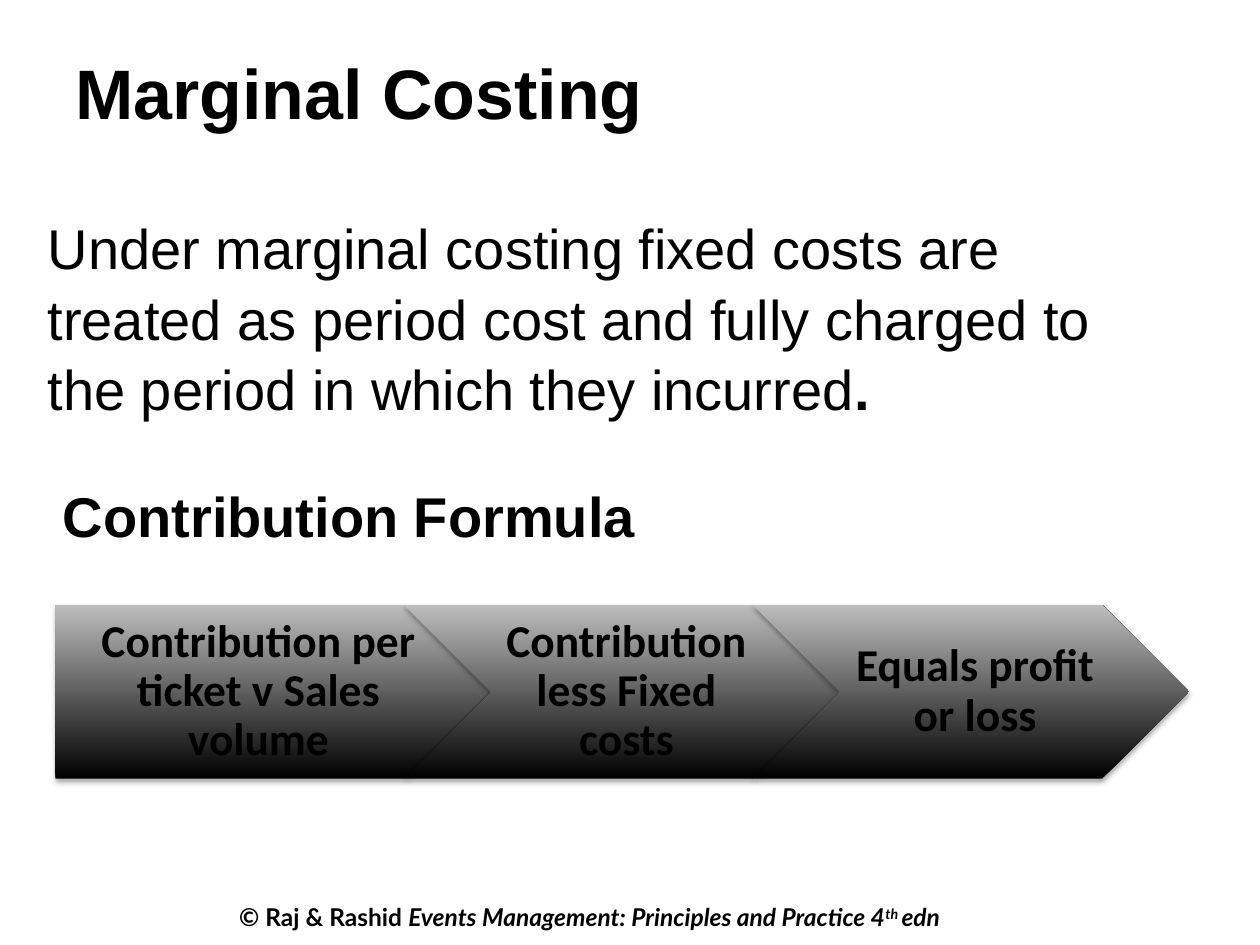
from lxml.etree import SubElement
from pptx import Presentation
from pptx.dml.color import RGBColor
from pptx.enum.shapes import MSO_SHAPE as SHAPE
from pptx.enum.text import MSO_ANCHOR as ANCHOR, PP_ALIGN as ALIGN
from pptx.oxml.ns import qn
from pptx.util import Inches, Pt

BLACK = RGBColor(0x00, 0x00, 0x00)
GREY = RGBColor(0xBD, 0xBD, 0xBD)


def add_runs(p, runs, **base):
    """Append (text, overrides) runs that share a base font format."""
    for text, extra in runs:
        r = p.add_run()
        r.text = text
        r.font.color.rgb = BLACK
        for name, value in {**base, **extra}.items():
            setattr(r.font, name, value)
    return p


def add_text(box, runs, spacing, **base):
    tb = s.shapes.add_textbox(*map(Inches, box))
    tb.text_frame.word_wrap = True
    p = add_runs(tb.text_frame.paragraphs[0], runs, **base)
    p.line_spacing = spacing
    return p


prs = Presentation()
prs.slide_width, prs.slide_height = Inches(10), Inches(7.5)
s = prs.slides.add_slide(prs.slide_layouts[5])

# Title
title = s.shapes.title
title.left, title.top, title.width, title.height = map(Inches, (0.5, 0.3, 9, 0.93))
title.text_frame.vertical_anchor = ANCHOR.MIDDLE
p = add_runs(title.text_frame.paragraphs[0], [("Marginal Costing", {})],
             name="Arial", size=Pt(40), bold=True)
p.alignment, p.line_spacing = ALIGN.LEFT, 0.9

# Definition and formula heading
add_text((0.28, 1.62, 8.66, 1.72), [
    ("Under marginal costing fixed costs are treated as period cost and "
     "fully charged to the period in which they incurred", {}),
    (".", {"bold": True}),
], 1.05, name="Arial", size=Pt(32))
add_text((0.4, 3.75, 4.84, 0.64), [("Contribution Formula", {})],
         1.05, name="Arial", size=Pt(32), bold=True)

# Process arrows: each overlaps the one before by a fifth of its width
LEFT, TOP, WIDTH, HEIGHT = 0.44, 4.8, 3.46, 1.38
STEP = WIDTH * 0.8
steps = [
    (SHAPE.PENTAGON, 0.15, "Contribution per ticket v Sales volume"),
    (SHAPE.CHEVRON, 0.11, "Contribution less Fixed costs"),
    (SHAPE.CHEVRON, 0.11, "Equals profit or loss"),
]
for i, (kind, inset, label) in enumerate(steps):
    sp = s.shapes.add_shape(kind, Inches(LEFT + i * STEP), Inches(TOP),
                            Inches(WIDTH), Inches(HEIGHT))
    sp.line.fill.background()
    sp.fill.gradient()
    sp.fill.gradient_angle = 90
    for stop, colour, position in zip(sp.fill.gradient_stops, (BLACK, GREY), (0, 1)):
        stop.color.rgb, stop.position = colour, position

    # Soft shadow straight below
    sp.shadow.inherit = False
    effects = sp._element.spPr.find(qn("a:effectLst"))
    shadow = SubElement(effects, qn("a:outerShdw"), blurRad=str(Pt(3.1)),
                        dist=str(Pt(1.8)), dir="5400000", rotWithShape="0")
    colour = SubElement(shadow, qn("a:srgbClr"), val=str(BLACK))
    SubElement(colour, qn("a:alpha"), val="35000")

    tf = sp.text_frame
    for name, value in {"margin_left": Inches(inset), "margin_right": Inches(0.04),
                        "margin_top": Inches(0.08), "margin_bottom": Inches(0.08),
                        "vertical_anchor": ANCHOR.MIDDLE, "word_wrap": True}.items():
        setattr(tf, name, value)
    p = add_runs(tf.paragraphs[0], [(label, {})], name="Calibri", size=Pt(26), bold=True)
    p.alignment, p.line_spacing = ALIGN.CENTER, 0.9

# Copyright line
p = add_text((1.8, 7.11, 6.97, 0.34), [
    ("© Raj & Rashid ", {}),
    ("Events Management: Principles and Practice 4", {"italic": True}),
    ("th ", {"italic": True}),
    ("edn", {"italic": True}),
], 1.0, name="Lato", size=Pt(14), bold=True)
p.runs[2].font._element.set("baseline", "30000")

prs.save("out.pptx")
